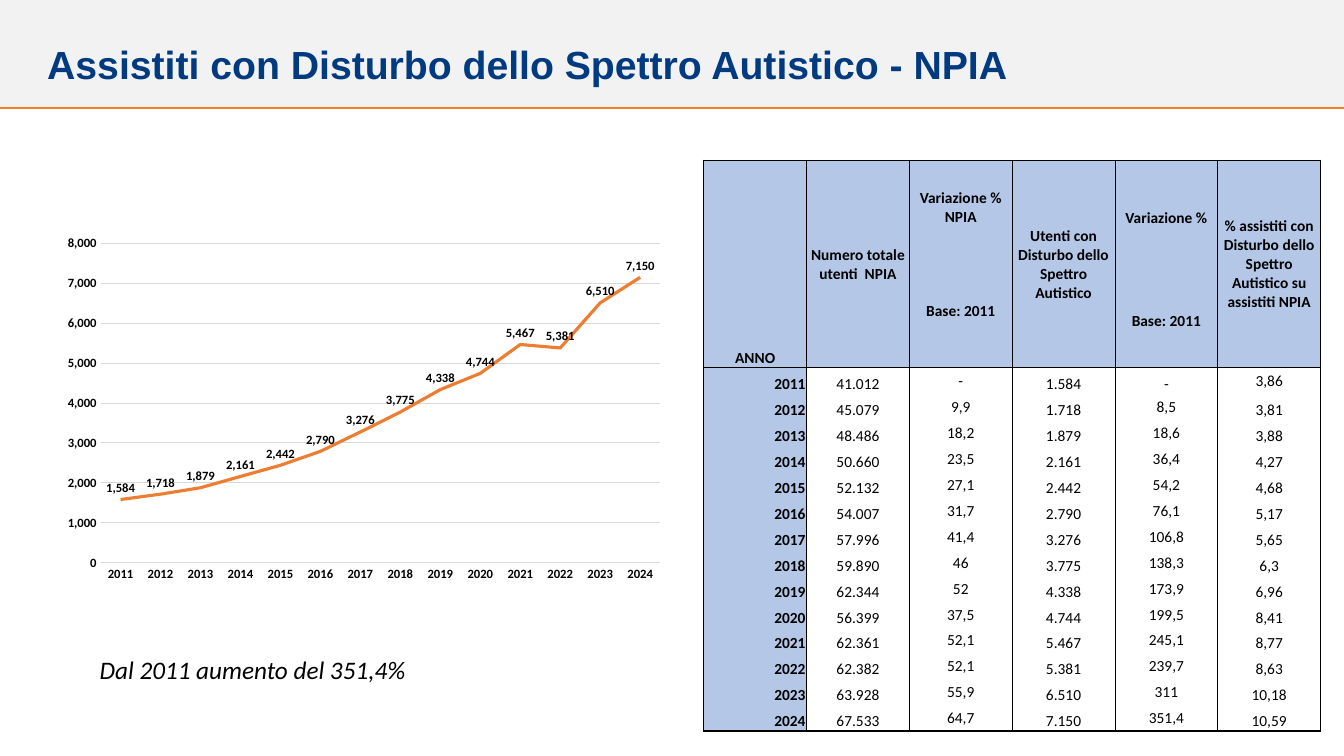
"""Build the slide on autism spectrum patients: trend chart and yearly table."""
from dataclasses import astuple, dataclass

import lxml.etree
import pptx
import pptx.chart.data
import pptx.dml.color
import pptx.enum.chart
import pptx.enum.shapes
import pptx.enum.text
import pptx.oxml
import pptx.oxml.ns
import pptx.util

Inches = pptx.util.Inches
Pt = pptx.util.Pt
RGBColor = pptx.dml.color.RGBColor
Anchor = pptx.enum.text.MSO_ANCHOR
Align = pptx.enum.text.PP_ALIGN
qn = pptx.oxml.ns.qn

BLACK = RGBColor(0x00, 0x00, 0x00)
WHITE = RGBColor(0xFF, 0xFF, 0xFF)
BAND_GREY = RGBColor(0xF2, 0xF2, 0xF2)
RULE_ORANGE = RGBColor(0xF4, 0x7B, 0x20)
TITLE_BLUE = RGBColor(0x00, 0x3A, 0x80)
HEADER_BLUE = RGBColor(0xB4, 0xC7, 0xE7)
SERIES_ORANGE = RGBColor(0xED, 0x7D, 0x31)
GRID_GREY = RGBColor(0xD9, 0xD9, 0xD9)

HEADER_HEIGHTS = (0.93, 0.2, 0.91)
HEADER_ROWS = len(HEADER_HEIGHTS)
BODY_HEIGHT = 3.61
COLUMN_COUNT = 6
COLUMN_WIDTH = 1.02


@dataclass
class Label:
    text: str
    left: float
    top: float
    width: float
    height: float
    font: str
    size: int
    color: RGBColor
    bold: bool = False
    italic: bool = False
    wrap: bool = True
    anchor: Anchor = Anchor.TOP


@dataclass
class HeaderCell:
    row: int
    column: int
    span: int
    text: str


@dataclass
class YearRow:
    year: str
    patients: str
    patients_change: str
    autism: str
    autism_change: str
    share: str


LABELS = [
    Label("Assistiti con Disturbo dello Spettro Autistico - NPIA", 0.37, 0.19, 12.6, 0.89,
          "Arial", 28, TITLE_BLUE, bold=True, anchor=Anchor.MIDDLE),
    Label("Dal 2011 aumento del 351,4%", 0.89, 6.44, 3.27, 0.4,
          "Calibri", 18, BLACK, italic=True, wrap=False),
]
HEADERS = [
    HeaderCell(0, 0, 3, "ANNO"),
    HeaderCell(0, 1, 3, "Numero totale utenti  NPIA"),
    HeaderCell(0, 2, 1, "Variazione % NPIA"),
    HeaderCell(1, 2, 2, "Base: 2011"),
    HeaderCell(0, 3, 3, "Utenti con Disturbo dello Spettro Autistico"),
    HeaderCell(0, 4, 2, "Variazione %"),
    HeaderCell(2, 4, 1, "Base: 2011"),
    HeaderCell(0, 5, 3, "% assistiti con Disturbo dello Spettro Autistico su assistiti NPIA"),
]
YEARS = [
    YearRow("2011", "41.012", "-", "1.584", "-", "3,86"),
    YearRow("2012", "45.079", "9,9", "1.718", "8,5", "3,81"),
    YearRow("2013", "48.486", "18,2", "1.879", "18,6", "3,88"),
    YearRow("2014", "50.660", "23,5", "2.161", "36,4", "4,27"),
    YearRow("2015", "52.132", "27,1", "2.442", "54,2", "4,68"),
    YearRow("2016", "54.007", "31,7", "2.790", "76,1", "5,17"),
    YearRow("2017", "57.996", "41,4", "3.276", "106,8", "5,65"),
    YearRow("2018", "59.890", "46", "3.775", "138,3", "6,3"),
    YearRow("2019", "62.344", "52", "4.338", "173,9", "6,96"),
    YearRow("2020", "56.399", "37,5", "4.744", "199,5", "8,41"),
    YearRow("2021", "62.361", "52,1", "5.467", "245,1", "8,77"),
    YearRow("2022", "62.382", "52,1", "5.381", "239,7", "8,63"),
    YearRow("2023", "63.928", "55,9", "6.510", "311", "10,18"),
    YearRow("2024", "67.533", "64,7", "7.150", "351,4", "10,59"),
]
ROW_COUNT = HEADER_ROWS + len(YEARS)


def style_font(font, name: str, size: float, color: RGBColor, bold: bool, italic: bool = False) -> None:
    font.name, font.size, font.bold, font.italic = name, Pt(size), bold, italic
    font.color.rgb = color


def add_banner(slide) -> None:
    band = slide.shapes.add_shape(pptx.enum.shapes.MSO_SHAPE.RECTANGLE, 0, 0, Inches(13.33), Inches(1.07))
    band.shadow.inherit = False
    band.fill.solid()
    band.fill.fore_color.rgb = BAND_GREY
    band.line.fill.background()
    rule = slide.shapes.add_connector(pptx.enum.shapes.MSO_CONNECTOR.STRAIGHT,
                                      0, Inches(1.07), Inches(13.33), Inches(1.07))
    rule.line.color.rgb = RULE_ORANGE
    rule.line.width = Pt(1)
    lxml.etree.SubElement(rule._element.spPr, qn("a:effectLst"))


def add_label(slide, label: Label) -> None:
    box = slide.shapes.add_textbox(Inches(label.left), Inches(label.top), Inches(label.width), Inches(label.height))
    frame = box.text_frame
    frame.text = label.text
    frame.word_wrap = label.wrap
    frame.vertical_anchor = label.anchor
    style_font(frame.paragraphs[0].runs[0].font, label.font, label.size, label.color, label.bold, label.italic)


def add_trend_chart(slide) -> None:
    data = pptx.chart.data.CategoryChartData(number_format="#,##0")
    data.categories = [entry.year for entry in YEARS]
    data.add_series("Utenti", [int(entry.autism.replace(".", "")) for entry in YEARS])
    chart = slide.shapes.add_chart(pptx.enum.chart.XL_CHART_TYPE.LINE, Inches(0.55), Inches(2.27),
                                   Inches(6.12), Inches(3.57), data).chart
    chart.has_legend = chart.has_title = False
    style_font(chart.font, "Calibri", 10, BLACK, True)
    for axis in (chart.category_axis, chart.value_axis):
        axis.major_tick_mark = axis.minor_tick_mark = pptx.enum.chart.XL_TICK_MARK.NONE
        style_font(axis.tick_labels.font, "Calibri", 9, BLACK, True)
    values = chart.value_axis
    values.minimum_scale, values.maximum_scale, values.major_unit = 0, 8000, 1000
    values.tick_labels.number_format = "#,##0"
    values.tick_labels.number_format_is_linked = False
    values.format.line.fill.background()
    for line in (chart.category_axis.format.line, values.major_gridlines.format.line):
        line.color.rgb = GRID_GREY
        line.width = Pt(0.75)
    plot = chart.plots[0]
    plot.vary_by_categories = False
    series = plot.series[0]
    series.smooth = False
    series.marker.style = pptx.enum.chart.XL_MARKER_STYLE.NONE
    series.format.line.color.rgb = SERIES_ORANGE
    series.format.line.width = Pt(2.25)
    labels = series.data_labels
    labels.show_value = True
    labels.position = pptx.enum.chart.XL_LABEL_POSITION.ABOVE
    style_font(labels.font, "Calibri", 9, BLACK, True)


def set_border(cell, side: str, points: float) -> None:
    line = lxml.etree.SubElement(cell._tc.get_or_add_tcPr(), qn(f"a:ln{side}"), w=str(Pt(points)))
    if points:
        fill = lxml.etree.SubElement(line, qn("a:solidFill"))
        lxml.etree.SubElement(fill, qn("a:srgbClr"), val=str(BLACK))
    else:
        lxml.etree.SubElement(line, qn("a:noFill"))


def style_cell(cell, row: int, column: int) -> None:
    last_row = row + (cell.span_height if cell.is_merge_origin else 1) - 1
    set_border(cell, "L", 1 if column in (0, 1) else 0.5)
    set_border(cell, "R", 1 if column in (0, COLUMN_COUNT - 1) else 0.5)
    set_border(cell, "T", 1 if row in (0, HEADER_ROWS) else 0)
    set_border(cell, "B", 1 if last_row in (HEADER_ROWS - 1, ROW_COUNT - 1) else 0)
    cell.fill.solid()
    cell.fill.fore_color.rgb = HEADER_BLUE if row < HEADER_ROWS or column == 0 else WHITE
    cell.margin_left = cell.margin_right = cell.margin_top = Inches(0.01)
    cell.margin_bottom = 0
    lxml.etree.SubElement(cell.text_frame.paragraphs[0]._p, qn("a:endParaRPr"), sz="800")


def fill_cell(cell, text: str, bold: bool, align: Align, anchor: Anchor) -> None:
    cell.text_frame.text = text
    cell.vertical_anchor = anchor
    paragraph = cell.text_frame.paragraphs[0]
    paragraph.alignment = align
    style_font(paragraph.runs[0].font, "Calibri", 11, BLACK, bold)


def add_year_table(slide) -> None:
    table = slide.shapes.add_table(ROW_COUNT, COLUMN_COUNT, Inches(6.98), Inches(1.59),
                                   Inches(COLUMN_COUNT * COLUMN_WIDTH),
                                   Inches(sum(HEADER_HEIGHTS) + BODY_HEIGHT)).table
    table.first_row = table.horz_banding = False
    for column in table.columns:
        column.width = Inches(COLUMN_WIDTH)
    for index, row in enumerate(table.rows):
        row.height = Inches(HEADER_HEIGHTS[index] if index < HEADER_ROWS else BODY_HEIGHT / len(YEARS))
    for header in HEADERS:
        cell = table.cell(header.row, header.column)
        if header.span > 1:
            cell.merge(table.cell(header.row + header.span - 1, header.column))
        fill_cell(cell, header.text, True, Align.CENTER, Anchor.MIDDLE if header.column else Anchor.BOTTOM)
    for index, entry in enumerate(YEARS):
        middle_columns = (2, 4) if index else (2, 5)
        for column, text in enumerate(astuple(entry)):
            fill_cell(table.cell(HEADER_ROWS + index, column), text, column == 0,
                      Align.CENTER if column else Align.RIGHT,
                      Anchor.MIDDLE if column in middle_columns else Anchor.BOTTOM)
    for row in range(ROW_COUNT):
        for column in range(COLUMN_COUNT):
            style_cell(table.cell(row, column), row, column)


def main() -> None:
    presentation = pptx.Presentation()
    presentation.slide_width, presentation.slide_height = Inches(13.33), Inches(7.5)
    slide = presentation.slides.add_slide(presentation.slide_layouts[6])
    add_banner(slide)
    for label in LABELS:
        add_label(slide, label)
    add_trend_chart(slide)
    add_year_table(slide)
    presentation.save("out.pptx")


if __name__ == "__main__":
    main()
